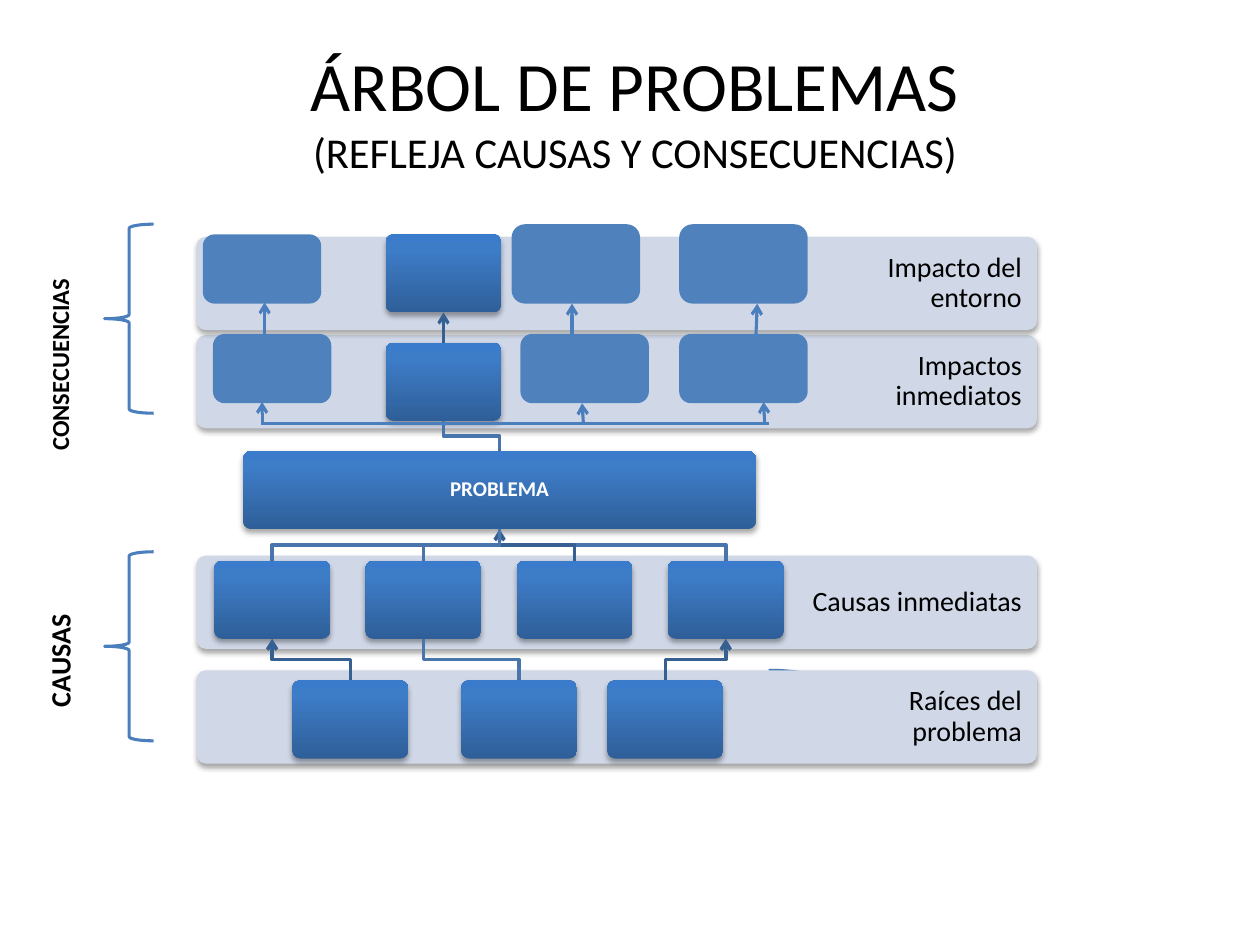
from typing import NamedTuple, Optional

from lxml.etree import SubElement
from pptx import Presentation
from pptx.dml.color import RGBColor
from pptx.enum.shapes import MSO_CONNECTOR, MSO_SHAPE
from pptx.enum.text import MSO_ANCHOR, MSO_AUTO_SIZE, PP_ALIGN
from pptx.oxml import parse_xml
from pptx.oxml.ns import nsdecls, qn
from pptx.util import Inches, Pt

BLACK = RGBColor(0x00, 0x00, 0x00)
WHITE = RGBColor(0xFF, 0xFF, 0xFF)
BAND_BLUE = RGBColor(0xD0, 0xD8, 0xE8)
BOX_BLUE = RGBColor(0x4F, 0x81, 0xBD)
LINE_BLUE = RGBColor(0x4B, 0x7E, 0xBC)
LINK_BLUE = RGBColor(0x48, 0x75, 0xAC)
ARROW_BLUE = RGBColor(0x37, 0x60, 0x92)
GRADIENT = ((0, RGBColor(0x2F, 0x5F, 0x99)), (80, RGBColor(0x3D, 0x7C, 0xC7)),
            (100, RGBColor(0x3A, 0x7C, 0xCB)))

NODE_WIDTH, NODE_HEIGHT = 0.92, 0.62
BAND_HEIGHT = 0.74
THIN, THICK = 1.75, 2


class Area(NamedTuple):
    left: float
    top: float
    width: float
    height: float

    @property
    def center(self) -> float:
        return self.left + self.width / 2

    @property
    def bottom(self) -> float:
        return self.top + self.height

    def emu(self) -> list:
        return [Inches(value) for value in self]


class Band(NamedTuple):
    top: float
    label: str


class Node(NamedTuple):
    area: Area
    parent: Optional[Area] = None
    arrow: bool = False


class Line(NamedTuple):
    start: tuple
    end: tuple
    arrow: bool = True
    color: RGBColor = LINE_BLUE


class SideLabel(NamedTuple):
    text: str
    area: Area
    size: int
    align: PP_ALIGN
    brace_top: float


def node_area(left: float, top: float, width: float = NODE_WIDTH) -> Area:
    return Area(left, top, width, NODE_HEIGHT)


BANDS = [Band(5.32, "Raíces del problema"), Band(4.41, "Causas inmediatas"),
         Band(2.66, "Impactos inmediatos"), Band(1.88, "Impacto del entorno")]

IMPACT = node_area(3.06, 2.72)
PROBLEM = node_area(1.93, 3.58, 4.07)
CAUSES = [node_area(1.7 + 1.2 * column, 4.45) for column in range(4)]
ROOTS = [node_area(left, 5.4) for left in (2.32, 3.66, 4.82)]
NODES = [
    Node(node_area(3.06, 1.86)),
    Node(IMPACT),
    Node(PROBLEM, IMPACT),
    Node(CAUSES[3], PROBLEM),
    Node(ROOTS[2], CAUSES[3], arrow=True),
    Node(CAUSES[2], PROBLEM, arrow=True),
    Node(CAUSES[1], PROBLEM),
    Node(ROOTS[1], CAUSES[1]),
    Node(CAUSES[0], PROBLEM),
    Node(ROOTS[0], CAUSES[0], arrow=True),
]

CONSEQUENCES = [
    Area(4.06, 1.78, 1.02, 0.63), Area(1.61, 1.86, 0.94, 0.55),
    Area(5.39, 1.78, 1.02, 0.63), Area(1.69, 2.65, 0.94, 0.55),
    Area(5.39, 2.65, 1.02, 0.55), Area(4.13, 2.65, 1.02, 0.55),
]
LINES = [
    Line((3.52, 2.72), (3.52, 2.48), color=ARROW_BLUE),
    Line((2.1, 2.65), (2.1, 2.4)),
    Line((6, 2.65), (6.01, 2.41)),
    Line((4.54, 2.65), (4.54, 2.41)),
    Line((2.09, 3.36), (6.1, 3.36), arrow=False),
    Line((2.08, 3.37), (2.08, 3.19)),
    Line((6.07, 3.37), (6.06, 3.19)),
    Line((4.63, 3.36), (4.62, 3.2)),
]
SIDE_LABELS = [
    SideLabel("CONSECUENCIAS", Area(-0.55, 2.48, 2.05, 0.34), 14, PP_ALIGN.LEFT, 1.78),
    SideLabel("CAUSAS", Area(-0.16, 5.06, 1.27, 0.37), 16, PP_ALIGN.CENTER, 4.38),
]


def add_run(paragraph, text: str, size: float, color=BLACK, bold=False) -> None:
    run = paragraph.add_run()
    run.text = text
    font = run.font
    font.name, font.size, font.bold = "Calibri", Pt(size), bold
    font.color.rgb = color


def add_label(shapes, area: Area, text: str, size: float, align, inset=None,
              color=BLACK, bold=False):
    label = shapes.add_textbox(*area.emu())
    frame = label.text_frame
    frame.word_wrap = True
    paragraph = frame.paragraphs[0]
    paragraph.alignment = align
    if inset is not None:
        frame.vertical_anchor = MSO_ANCHOR.MIDDLE
        frame.margin_left = frame.margin_right = Inches(inset)
        frame.margin_top = frame.margin_bottom = Inches(inset)
        paragraph.line_spacing = 0.9
    add_run(paragraph, text, size, color, bold)
    return label


def add_rounded(shapes, area: Area, fill: Optional[RGBColor], corner: float):
    box = shapes.add_shape(MSO_SHAPE.ROUNDED_RECTANGLE, *area.emu())
    box.adjustments[0] = corner
    box.shadow.inherit = False
    box.line.fill.background()
    if fill is None:
        stops = "".join(f'<a:gs pos="{share * 1000}"><a:srgbClr val="{color}"/></a:gs>'
                        for share, color in GRADIENT)
        box._element.spPr.find(qn("a:prstGeom")).addnext(parse_xml(
            f'<a:gradFill {nsdecls("a")} rotWithShape="1"><a:gsLst>{stops}</a:gsLst>'
            '<a:lin ang="16200000" scaled="0"/></a:gradFill>'))
    else:
        box.fill.solid()
        box.fill.fore_color.rgb = fill
    return box


def add_drop_shadow(box) -> None:
    effects = box._element.spPr.find(qn("a:effectLst"))
    effects.append(parse_xml(
        f'<a:outerShdw {nsdecls("a")} blurRad="{Pt(3.1)}" dist="{Pt(1.8)}" dir="5400000" '
        'rotWithShape="0"><a:srgbClr val="000000"><a:alpha val="35000"/></a:srgbClr>'
        '</a:outerShdw>'))


def style_line(shape, color: RGBColor, width: float, arrow_end: str = "") -> None:
    """Colour the line; arrow_end is headEnd, tailEnd or empty."""
    shape.line.color.rgb = color
    shape.line.width = Pt(width)
    if arrow_end:
        SubElement(shape.line._get_or_add_ln(), qn(f"a:{arrow_end}"), type="arrow")


def add_link(shapes, parent: Area, child: Area, arrow: bool) -> None:
    middle = (parent.bottom + child.top) / 2
    points = [(parent.center, parent.bottom), (parent.center, middle),
              (child.center, middle), (child.center, child.top)]
    corners = [(Inches(x), Inches(y)) for x, y in points]
    builder = shapes.build_freeform(*corners[0])
    builder.add_line_segments(corners[1:], close=False)
    link = builder.convert_to_shape()
    link.shadow.inherit = False
    link.fill.background()
    style_line(link, ARROW_BLUE if arrow else LINK_BLUE, THICK, "headEnd" if arrow else "")


def add_line(shapes, line: Line) -> None:
    ends = [Inches(value) for value in line.start + line.end]
    connector = shapes.add_connector(MSO_CONNECTOR.STRAIGHT, *ends)
    style_line(connector, line.color, THIN, "tailEnd" if line.arrow else "")
    SubElement(connector._element.spPr, qn("a:effectLst"))


def add_brace(shapes, kind, area: Area) -> None:
    brace = shapes.add_shape(kind, *area.emu())
    brace.shadow.inherit = False
    brace.fill.background()
    style_line(brace, LINE_BLUE, THIN)


def add_title(title) -> None:
    title.left, title.top, title.width, title.height = Area(0.5, 0.36, 9.08, 1.02).emu()
    frame = title.text_frame
    frame.auto_size = MSO_AUTO_SIZE.NONE
    frame.vertical_anchor = MSO_ANCHOR.MIDDLE
    heading = frame.paragraphs[0]
    heading.alignment = PP_ALIGN.CENTER
    add_run(heading, "ÁRBOL DE PROBLEMAS", 39.6)
    heading.add_line_break()
    add_run(heading, "(REFLEJA CAUSAS Y CONSECUENCIAS)", 24.3)


def main() -> None:
    deck = Presentation()
    deck.slide_width, deck.slide_height = Inches(10), Inches(7.5)
    slide = deck.slides.add_slide(deck.slide_layouts[5])
    shapes = slide.shapes
    add_title(shapes.title)
    add_brace(shapes, MSO_SHAPE.RIGHT_BRACE, Area(6.1, 5.32, 0.63, 0.55))
    for band in BANDS:
        add_drop_shadow(add_rounded(shapes, Area(1.56, band.top, 6.67, BAND_HEIGHT), BAND_BLUE, 0.1))
        add_label(shapes, Area(6.23, band.top, 2, BAND_HEIGHT), band.label, 16,
                  PP_ALIGN.RIGHT, inset=0.12)
    for node in NODES:
        if node.parent:
            add_link(shapes, node.parent, node.area, node.arrow)
        add_drop_shadow(add_rounded(shapes, node.area, None, 0.1))
    add_label(shapes, Area(1.95, 3.6, 4.03, 0.58), "PROBLEMA", 12, PP_ALIGN.CENTER,
              inset=0.05, color=WHITE, bold=True)
    for area in CONSEQUENCES:
        add_rounded(shapes, area, BOX_BLUE, 0.17)
    for line in LINES:
        add_line(shapes, line)
    for side in SIDE_LABELS:
        add_brace(shapes, MSO_SHAPE.LEFT_BRACE, Area(0.83, side.brace_top, 0.39, 1.5))
        label = add_label(shapes, side.area, side.text, side.size, side.align, bold=True)
        label.rotation = 270
    deck.save("out.pptx")


if __name__ == "__main__":
    main()
